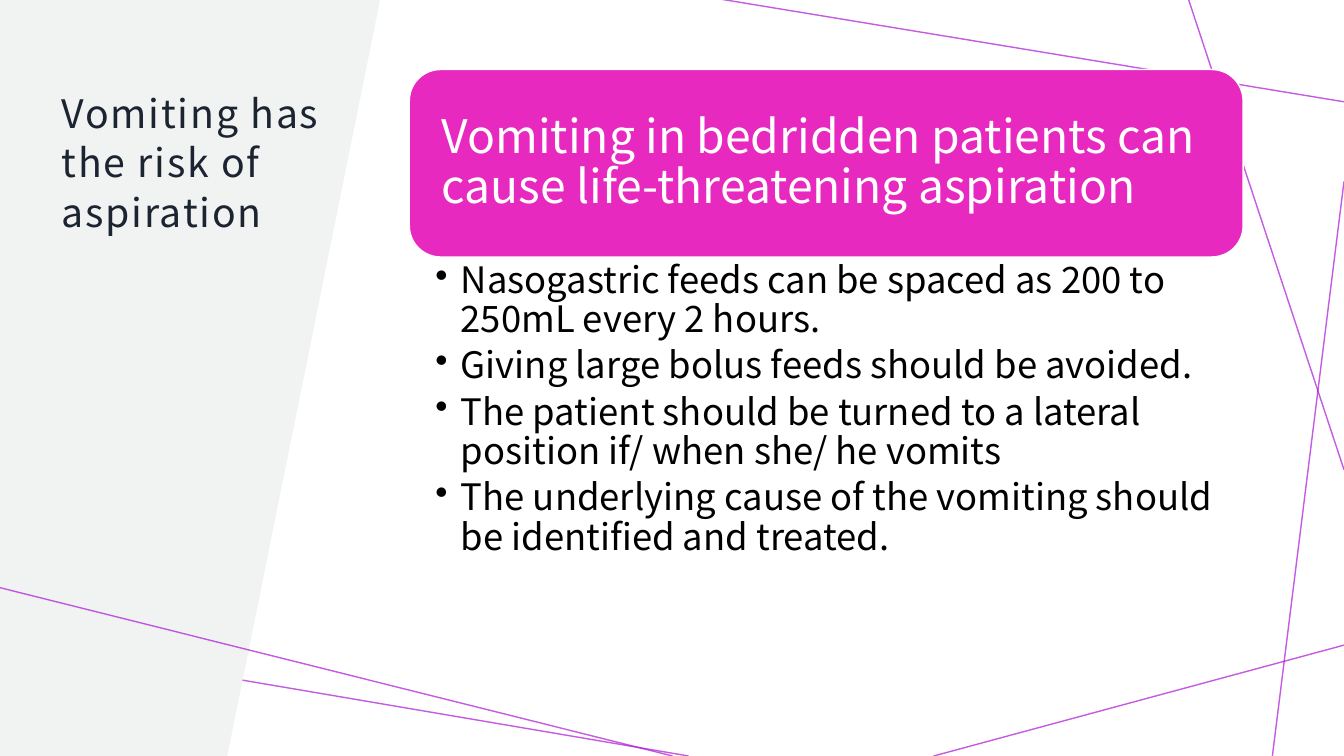
import pptx
import pptx.util
import pptx.dml.color
import pptx.enum.shapes
import pptx.enum.text
import pptx.oxml
import pptx.oxml.ns

RGBColor = pptx.dml.color.RGBColor
Inches = pptx.util.Inches
Pt = pptx.util.Pt
Anchor = pptx.enum.text.MSO_ANCHOR

PURPLE = RGBColor(0xAC, 0x17, 0xD5)
PINK = RGBColor(0xE7, 0x29, 0xC0)
PALE = RGBColor(0xF0, 0xF3, 0xF1)
INK = RGBColor(0x1B, 0x24, 0x30)
BLACK = RGBColor(0, 0, 0)
WHITE = RGBColor(255, 255, 255)
FONT = "Noto Sans CJK SC"

BACK = [
    (6.83, 7.5, -0.05, 6.33),
    (13.33, 6.4, 9.26, 7.5),
    (13.33, 1.8, 12.62, 7.5),
    (13.33, 4.66, 11.79, 0),
    (13.33, 1.01, 7.14, -0.01),
]
FRONT = [(6.67, 7.5, 0, 5.83)]
POINTS = [
    "Nasogastric feeds can be spaced as 200 to 250mL every 2 hours.",
    "Giving large bolus feeds should be avoided.",
    "The patient should be turned to a lateral position if/ when she/ he vomits",
    "The underlying cause of the vomiting should be identified and treated.",
]


def add_xml(parent, tag, **values):
    node = pptx.oxml.parse_xml(f"<a:{tag} {pptx.oxml.ns.nsdecls('a')}/>")
    for name, value in values.items():
        node.set(name, value)
    parent.append(node)


def apply(target, values):
    for name, value in values.items():
        setattr(target, name, value)


def set_frame(frame, insets, anchor):
    sides = ("margin_left", "margin_top", "margin_right", "margin_bottom")
    apply(frame, dict(zip(sides, map(Inches, insets))))
    apply(frame, {
        "word_wrap": True,
        "auto_size": pptx.enum.text.MSO_AUTO_SIZE.NONE,
        "vertical_anchor": anchor,
    })


def write(para, text, size, color, spacing, after=0):
    apply(para, {
        "alignment": pptx.enum.text.PP_ALIGN.LEFT,
        "line_spacing": spacing,
        "space_before": Pt(0),
        "space_after": Pt(after),
    })
    run = para.add_run()
    run.text = text
    apply(run.font, {"size": Pt(size), "name": FONT})
    run.font.color.rgb = color
    return run


def draw_lines(slide, ends):
    for points in ends:
        line = slide.shapes.add_connector(
            pptx.enum.shapes.MSO_CONNECTOR.STRAIGHT, *map(Inches, points))
        line.line.width = Pt(1)
        line.line.color.rgb = PURPLE
        tint = line.line.fill.fore_color
        tint.rgb = PURPLE
        color = line._element.spPr.find(".//" + pptx.oxml.ns.qn("a:srgbClr"))
        add_xml(color, "alpha", val="70000")
        add_xml(line._element.spPr, "effectLst")


def draw_panel(slide, left, top, width, height):
    right, base = left + width, top + height
    corners = [
        (right, top + 0.02), (right - 1.52, base - 0.04), (left, base),
    ]
    path = slide.shapes.build_freeform(Inches(left), Inches(top), scale=1)
    path.add_line_segments([(Inches(x), Inches(y)) for x, y in corners])
    panel = path.convert_to_shape()
    panel.shadow.inherit = False
    panel.fill.solid()
    panel.fill.fore_color.rgb = PALE
    panel.line.fill.background()


def place_title(slide, left, top, width, height):
    title = slide.shapes.title
    sizes = {"left": left, "top": top, "width": width, "height": height}
    apply(title, {name: Inches(value) for name, value in sizes.items()})
    set_frame(title.text_frame, (0.12, 0.12, 0.12, 0.1), Anchor.TOP)
    run = write(title.text_frame.paragraphs[0],
                "Vomiting has the risk of aspiration", 28, INK, 1.05)
    run.font._element.set("spc", "130")
    slide.shapes._spTree.append(title._element)


def draw_advice(slide, left, top, width, height):
    head = 1.86
    card = slide.shapes.add_shape(
        pptx.enum.shapes.MSO_SHAPE.ROUNDED_RECTANGLE,
        *map(Inches, (left, top, width, head)))
    card.shadow.inherit = False
    card.fill.solid()
    card.fill.fore_color.rgb = PINK
    card.line.color.rgb = WHITE
    card.line.width = Pt(1)
    set_frame(card.text_frame, (0.23,) * 4, Anchor.MIDDLE)
    write(card.text_frame.paragraphs[0],
          "Vomiting in bedridden patients can cause life-threatening aspiration",
          33, WHITE, 0.9)

    box = slide.shapes.add_textbox(
        *map(Inches, (left, top + head, width, height - head)))
    frame = box.text_frame
    set_frame(frame, (0.26, 0.05, 0.26, 0.05), Anchor.TOP)
    for index, text in enumerate(POINTS):
        para = frame.add_paragraph() if index else frame.paragraphs[0]
        write(para, text, 26, BLACK, 0.9, 5)
        props = para._p.get_or_add_pPr()
        apply(para, {"level": 1})
        props.set("marL", str(Inches(0.25)))
        props.set("indent", str(Inches(-0.25)))
        add_xml(props, "buChar", char="•")


def main():
    deck = pptx.Presentation()
    apply(deck, {"slide_width": Inches(13.33), "slide_height": Inches(7.5)})
    slide = deck.slides.add_slide(deck.slide_layouts[5])
    draw_lines(slide, BACK)
    draw_panel(slide, 0, -0.02, 3.77, 7.58)
    place_title(slide, 0.49, 0.74, 3.16, 1.77)
    draw_advice(slide, 4.06, 0.69, 8.27, 6.12)
    draw_lines(slide, FRONT)
    deck.save("out.pptx")


if __name__ == "__main__":
    main()
